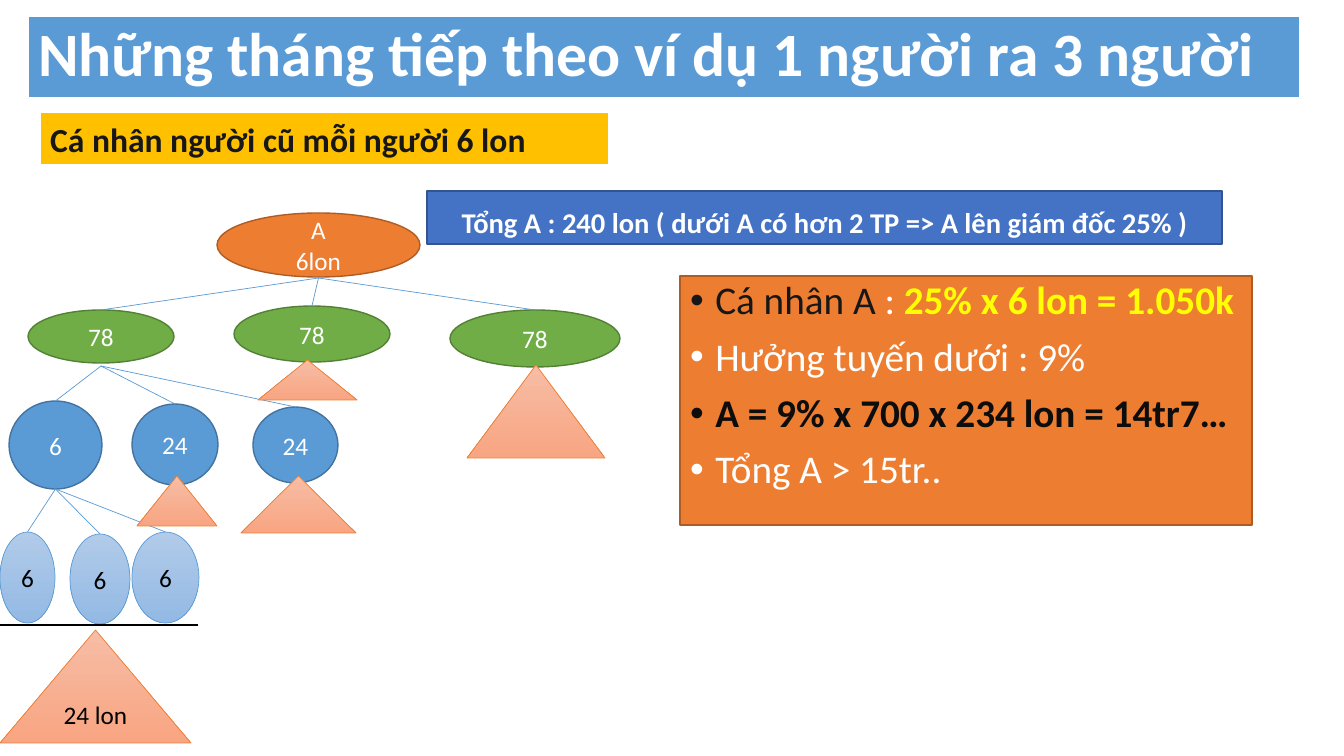
from lxml.etree import SubElement
from pptx import Presentation
from pptx.dml.color import RGBColor
from pptx.enum.shapes import MSO_CONNECTOR, MSO_SHAPE
from pptx.enum.text import MSO_ANCHOR as Anchor, MSO_AUTO_SIZE, PP_ALIGN as Align
from pptx.oxml.ns import qn
from pptx.util import Emu, Inches, Pt

WHITE = RGBColor(0xFF, 0xFF, 0xFF)
BLACK = RGBColor(0x00, 0x00, 0x00)
INK = RGBColor(0x18, 0x17, 0x17)
NEAR_BLACK = RGBColor(0x0D, 0x0D, 0x0D)
YELLOW = RGBColor(0xFF, 0xFF, 0x00)
GOLD = RGBColor(0xFF, 0xC0, 0x00)
BLUE = RGBColor(0x5B, 0x9B, 0xD5)
BLUE_EDGE = RGBColor(0x43, 0x73, 0x9E)
ROYAL = RGBColor(0x44, 0x72, 0xC4)
ROYAL_EDGE = RGBColor(0x32, 0x54, 0x91)
ORANGE = RGBColor(0xED, 0x7D, 0x31)
ORANGE_EDGE = RGBColor(0xAF, 0x5C, 0x24)
GREEN = RGBColor(0x70, 0xAD, 0x47)
GREEN_EDGE = RGBColor(0x53, 0x80, 0x35)
PALE_BLUE = (RGBColor(0xB1, 0xCB, 0xE9), RGBColor(0x93, 0xB9, 0xE4))
PALE_ORANGE = (RGBColor(0xF7, 0xBD, 0xA5), RGBColor(0xF8, 0xA5, 0x82))

SLIDE_BOX = (1344, 756)


def px(length):
    return Emu(round(length * 914400 / 100.8))


class SlideBuilder:
    font = "Calibri"

    def __init__(self, slide):
        self.slide = slide

    def paint(self, shape, fill, edge, width):
        """Fill with one colour, or with a top-to-bottom pair of colours."""
        if isinstance(fill, RGBColor):
            shape.fill.solid()
            shape.fill.fore_color.rgb = fill
        else:
            shape.fill.gradient()
            shape.fill.gradient_angle = 270
            for stop, color in zip(shape.fill.gradient_stops, fill):
                stop.color.rgb = color
        shape.line.color.rgb = edge
        shape.line.width = Pt(width)

    def style_run(self, run, size, color, bold=False):
        run.font.name = self.font
        run.font.size = Pt(size)
        run.font.color.rgb = color
        run.font.bold = bold

    def panel(self, idx, box, fill, edge, width, anchor):
        holder = self.slide.placeholders[idx]
        holder.left, holder.top, holder.width, holder.height = map(px, box)
        self.paint(holder, fill, edge, width)
        frame = holder.text_frame
        frame.word_wrap = True
        frame.auto_size = MSO_AUTO_SIZE.NONE
        frame.vertical_anchor = anchor
        return frame

    def heading(self, frame, text, size, color, align=Align.LEFT, spacing=0.9, before=10):
        frame.text = text
        line = frame.paragraphs[0]
        line.alignment = align
        line.line_spacing = spacing
        line.space_before = Pt(before)
        self.style_run(line.runs[0], size, color, True)

    def bullets(self, frame, items, size):
        """Each item is a list of (text, colour, bold) parts."""
        for number, parts in enumerate(items):
            line = frame.add_paragraph() if number else frame.paragraphs[0]
            line.line_spacing = 0.9
            line.space_before = Pt(10)
            for text, color, bold in parts:
                run = line.add_run()
                run.text = text
                self.style_run(run, size, color, bold)
            props = line._p.get_or_add_pPr()
            props.set("marL", str(Inches(0.25)))
            props.set("indent", str(-Inches(0.25)))
            SubElement(props, qn("a:buFont")).set("typeface", "Arial")
            SubElement(props, qn("a:buChar")).set("char", "•")

    def node(self, preset, box, fill, edge, width, text="", color=WHITE):
        shape = self.slide.shapes.add_shape(preset, *map(px, box))
        shape.shadow.inherit = False
        self.paint(shape, fill, edge, width)
        if text:
            frame = shape.text_frame
            frame.word_wrap = True
            frame.vertical_anchor = Anchor.MIDDLE
            frame.text = text
            for line in frame.paragraphs:
                line.alignment = Align.CENTER
                self.style_run(line.runs[0], 18, color)
        return shape

    def line(self, start, end, color, width):
        link = self.slide.shapes.add_connector(MSO_CONNECTOR.STRAIGHT, *start, *end)
        link.line.color.rgb = color
        link.line.width = Pt(width)
        SubElement(link._element.spPr, qn("a:effectLst"))
        return link

    def fork(self, parent, children, drop):
        """Join a point just below the parent to the top of each child."""
        start = (parent.left + parent.width // 2, parent.top + parent.height + px(drop))
        for child in children:
            end = (child.left + child.width // 2, child.top)
            self.line(start, end, BLUE, 0.5).end_connect(child, 0)


def main():
    deck = Presentation()
    deck.slide_width, deck.slide_height = map(px, SLIDE_BOX)
    slide = deck.slides.add_slide(deck.slide_layouts[4])
    build = SlideBuilder(slide)

    title = build.panel(0, (28, 16, 1272, 82), BLUE, WHITE, 1.5, Anchor.MIDDLE)
    build.heading(title, "Những tháng tiếp theo ví dụ 1 người ra 3 người", 44, WHITE, before=0)
    personal = build.panel(1, (40, 112, 569, 53), GOLD, WHITE, 1.5, Anchor.BOTTOM)
    build.heading(personal, "Cá nhân người cũ mỗi người 6 lon", 24, INK)
    total = build.panel(3, (427, 191, 795, 53), ROYAL, ROYAL_EDGE, 1, Anchor.BOTTOM)
    build.heading(total, "Tổng A : 240 lon ( dưới A có hơn 2 TP => A lên giám đốc 25% )",
                  20.4, WHITE, Align.CENTER, 0.8)
    income = build.panel(2, (680, 276, 572, 249), ORANGE, ORANGE_EDGE, 1, Anchor.TOP)
    build.bullets(income, [
        [("Cá nhân A ", INK, False), (": ", WHITE, False),
         ("25% x 6 lon = 1.050k", YELLOW, True)],
        [("Hưởng tuyến dưới : 9%", WHITE, False)],
        [("A = 9% x 700 x 234 lon = 14tr7…", NEAR_BLACK, True)],
        [("Tổng A > 15tr..", WHITE, False)],
    ], 28)
    unused = slide.placeholders[4]._element
    unused.getparent().remove(unused)

    levels = [
        (ORANGE, ORANGE_EDGE, 1, WHITE, [("A\n6lon", (217, 213, 203, 64))]),
        (GREEN, GREEN_EDGE, 1, WHITE, [("78", (28, 310, 146, 53)), ("78", (234, 306, 156, 56)),
                                       ("78", (450, 310, 170, 57))]),
        (BLUE, BLUE_EDGE, 1, WHITE, [("6", (9, 401, 93, 88)), ("24", (132, 404, 86, 81)),
                                     ("24", (253, 407, 85, 76))]),
        (PALE_BLUE, BLUE, 0.5, BLACK, [("6", (0, 532, 55, 91)), ("6", (70, 534, 60, 90)),
                                       ("6", (132, 532, 67, 91))]),
    ]
    tree = [[build.node(MSO_SHAPE.OVAL, box, fill, edge, width, text, color)
             for text, box in members]
            for fill, edge, width, color, members in levels]
    for parents, children, drop in zip(tree, tree[1:], (1, 3, 0)):
        build.fork(parents[0], children, drop)

    teams = [("24 lon", (0, 630, 191, 113)), ("", (467, 365, 138, 93)), ("", (258, 360, 99, 40)),
             ("", (137, 476, 80, 50)), ("", (241, 476, 115, 57))]
    for text, box in teams:
        build.node(MSO_SHAPE.ISOSCELES_TRIANGLE, box, PALE_ORANGE, ORANGE, 0.5, text, BLACK)
    build.line((px(0), px(625)), (px(198), px(625)), BLACK, 1.5)

    deck.save("out.pptx")


if __name__ == "__main__":
    main()
